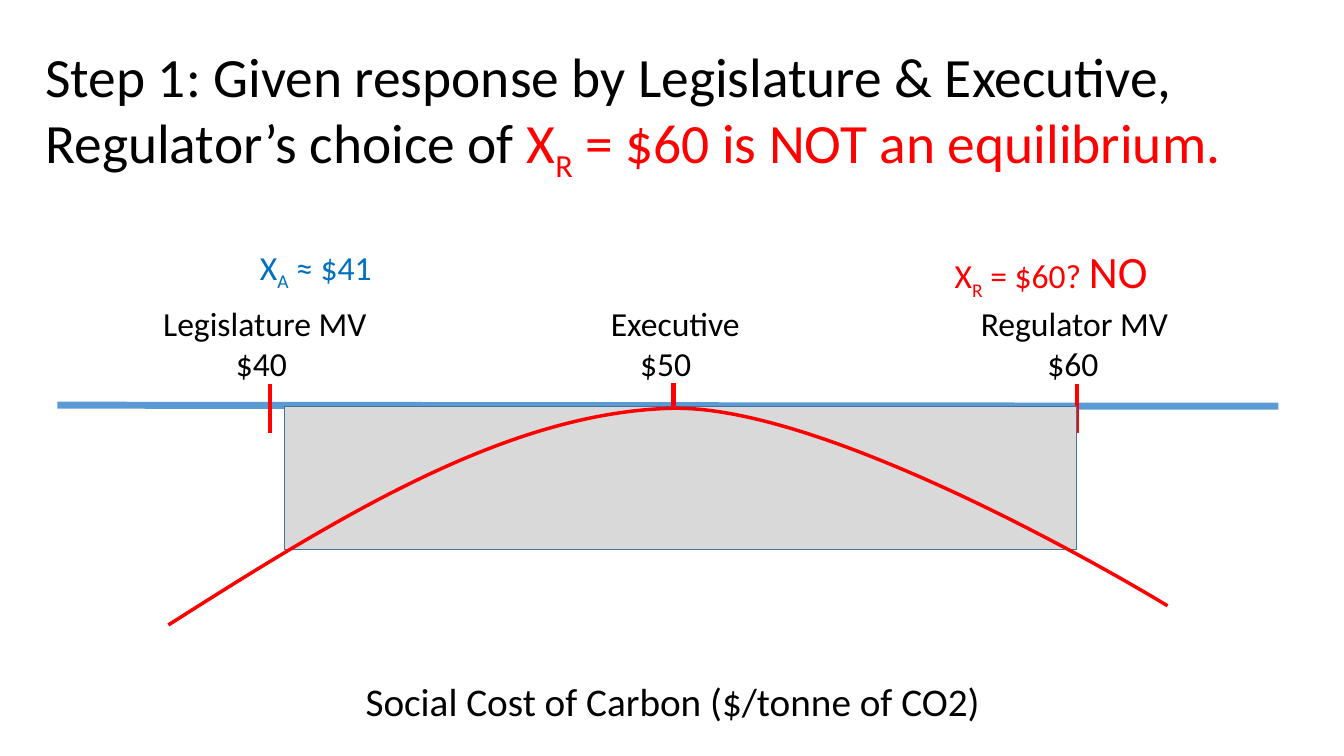
"""Build the slide on the regulator's choice of the social cost of carbon."""
import pptx
import pptx.util
import pptx.dml.color
import pptx.enum.shapes
import pptx.enum.text
import pptx.oxml
import pptx.oxml.ns

Inches = pptx.util.Inches
COLORS = {"ink": "000000", "red": "FF0000", "blue": "0070C0", "axis": "5B9BD5",
          "band": "D9D9D9", "band edge": "43739E"}


def write(frame, runs, align=pptx.enum.text.PP_ALIGN.LEFT):
    """Fill a text frame with runs of (text, size, colour, baseline)."""
    frame.word_wrap = True
    paragraph = frame.paragraphs[0]
    paragraph.alignment = align
    for text, size, color, baseline in runs:
        run = paragraph.add_run()
        run.text = text
        for key, value in {"name": "Calibri", "size": pptx.util.Pt(size)}.items():
            setattr(run.font, key, value)
        run.font.color.rgb = pptx.dml.color.RGBColor.from_string(COLORS[color])
        if baseline:
            run.font._element.set("baseline", str(baseline * 1000))
    return paragraph


def stroke(part, color, width):
    """Set the line of a shape or connector and drop its shadow."""
    part.line.color.rgb = pptx.dml.color.RGBColor.from_string(COLORS[color])
    part.line.width = pptx.util.Pt(width)
    effects = pptx.oxml.parse_xml(f"<a:effectLst {pptx.oxml.ns.nsdecls('a')}/>")
    part._element.spPr.append(effects)


deck = pptx.Presentation()
deck.slide_width, deck.slide_height = Inches(13.33), Inches(7.5)
slide = deck.slides.add_slide(deck.slide_layouts[5])
shapes = slide.shapes

title = shapes.title
place = {"left": 0.35, "top": 0.4, "width": 12.61, "height": 1.45}
for key, value in place.items():
    setattr(title, key, Inches(value))
title.text_frame.auto_size = pptx.enum.text.MSO_AUTO_SIZE.NONE
title.text_frame.vertical_anchor = pptx.enum.text.MSO_ANCHOR.MIDDLE
heading = write(title.text_frame, [
    ("Step 1: Given response by Legislature & Executive, Regulator’s choice of ", 39.6, "ink", 0),
    ("X", 39.6, "red", 0),
    ("R", 39.6, "red", -25),
    (" = $60 is NOT an equilibrium.", 39.6, "red", 0),
])
heading.line_spacing = 0.9

strokes = [(0.57, 4.02, 12.68, 4.03, "axis", 5)]
strokes += [(x, y, x, y + 0.49, "red", 3) for x, y in ((2.68, 3.81), (6.68, 3.8), (10.68, 3.81))]
for x1, y1, x2, y2, color, width in strokes:
    line = shapes.add_connector(pptx.enum.shapes.MSO_CONNECTOR.STRAIGHT,
                                Inches(x1), Inches(y1), Inches(x2), Inches(y2))
    stroke(line, color, width)

accepted_range = shapes.add_shape(pptx.enum.shapes.MSO_SHAPE.RECTANGLE,
                                  Inches(2.82), Inches(4.03), Inches(7.86), Inches(1.42))
accepted_range.fill.solid()
accepted_range.fill.fore_color.rgb = pptx.dml.color.RGBColor.from_string(COLORS["band"])
stroke(accepted_range, "band edge", 1)

controls = [(3.34, 5.14), (5.02, 4.09), (6.67, 4.05), (8.33, 4.02), (11.58, 6.01), (11.58, 6.01)]
builder = shapes.build_freeform(Inches(1.67), Inches(6.2))
builder.add_line_segments([(Inches(x), Inches(y)) for x, y in controls], close=False)
utility = builder.convert_to_shape()
utility.fill.background()
stroke(utility, "red", 2.5)
segments = utility._element.findall(".//" + pptx.oxml.ns.qn("a:lnTo"))
for start in range(0, len(segments), 3):
    bezier = pptx.oxml.parse_xml(f"<a:cubicBezTo {pptx.oxml.ns.nsdecls('a')}/>")
    segments[start].addprevious(bezier)
    for segment in segments[start:start + 3]:
        bezier.append(segment[0])
        segment.getparent().remove(segment)

labels = [
    (5.96, 2.96, 1.51, 0.5, [("Executive", 24, "ink", 0)]),
    (9.63, 2.96, 2.11, 0.5, [("Regulator MV", 24, "ink", 0)]),
    (1.52, 2.96, 2.28, 0.5, [("Legislature MV", 24, "ink", 0)]),
    (2.24, 3.35, 0.84, 0.5, [("$40", 24, "ink", 0)]),
    (6.25, 3.35, 0.82, 0.5, [("$50", 24, "ink", 0)]),
    (10.29, 3.35, 0.75, 0.5, [("$60", 24, "ink", 0)]),
    (9.37, 2.37, 2.29, 0.64, [("X", 24, "red", 0), ("R", 24, "red", -25),
                              (" = $60? ", 24, "red", 0), ("NO", 32, "red", 0)]),
    (2.48, 2.4, 1.67, 0.5, [("X", 24, "blue", 0), ("A", 24, "blue", -25),
                            (" ≈ $41", 24, "blue", 0)]),
]
for left, top, width, height, runs in labels:
    label = shapes.add_textbox(Inches(left), Inches(top), Inches(width), Inches(height))
    write(label.text_frame, runs)

axis_name = shapes.add_textbox(Inches(1.67), Inches(6.67), Inches(10), Inches(0.57))
write(axis_name.text_frame, [("Social Cost of Carbon ($/tonne of CO2)", 28, "ink", 0)],
      pptx.enum.text.PP_ALIGN.CENTER)

deck.save("out.pptx")
